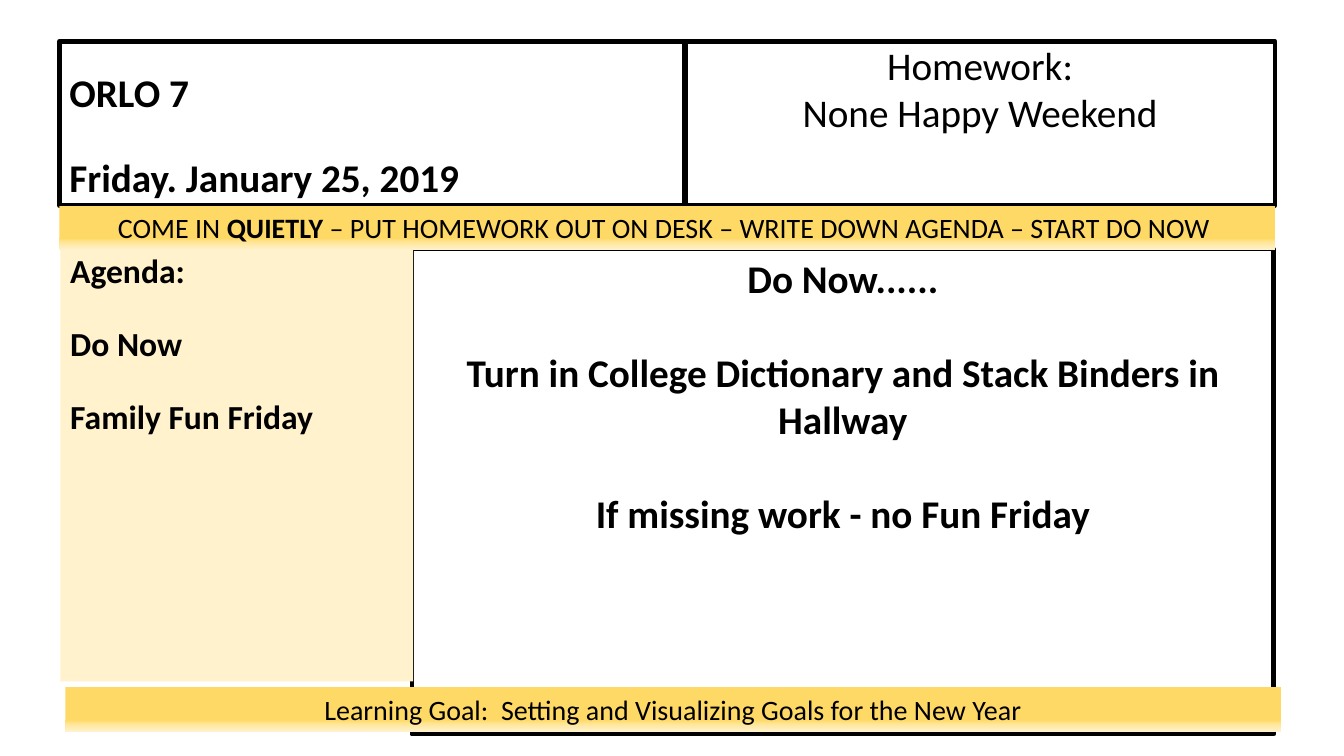
from dataclasses import dataclass
from lxml.etree import SubElement
from pptx import Presentation
from pptx.dml.color import RGBColor
from pptx.enum.text import MSO_ANCHOR, PP_ALIGN
from pptx.oxml.ns import qn
from pptx.util import Cm, Pt


@dataclass(frozen=True)
class Theme:
    font: str = "Calibri"
    ink: str = "000000"
    cream: str = "FFF2CC"
    fade: tuple = ((0, "FFD966"), (74, "FFD966"), (83, "FFE699"), (100, "FFF2CC"))
    large: float = 28
    medium: float = 24
    small: float = 20
    rule: float = 3.25


class Board:
    def __init__(self, slide, theme):
        self.slide = slide
        self.theme = theme

    def panel(self, spot, lines, size, bold=False, align=PP_ALIGN.CENTER,
              tight=1.0, gap=0, anchor=MSO_ANCHOR.TOP):
        box = self.slide.shapes.add_textbox(*map(Cm, spot))
        frame = box.text_frame
        frame.word_wrap = True
        frame.vertical_anchor = anchor
        for index, line in enumerate(lines):
            para = frame.paragraphs[0] if index == 0 else frame.add_paragraph()
            para.alignment = align
            para.line_spacing = tight
            para.space_before = Pt(gap if index else 0)
            font = para.font
            font.name = self.theme.font
            font.size = Pt(size)
            font.bold = bold
            font.color.rgb = RGBColor.from_string(self.theme.ink)
            for order, part in enumerate(line.split("*")):
                run = para.add_run()
                run.text = part
                if order % 2:
                    run.font.bold = True
        return box

    def frame(self, spot, lines, **style):
        box = self.panel(spot, lines, self.theme.large, **style)
        box.line.color.rgb = RGBColor.from_string(self.theme.ink)
        box.line.width = Pt(self.theme.rule)

    def block(self, spot, lines, **style):
        box = self.panel(spot, lines, self.theme.medium, **style)
        box.fill.solid()
        box.fill.fore_color.rgb = RGBColor.from_string(self.theme.cream)

    def banner(self, left, top, line):
        box = self.panel((left, top, 30.63, 1.12), [line], self.theme.small)
        box.fill.gradient()
        box.fill.gradient_angle = 270
        stops = box.element.spPr.find(qn("a:gradFill")).find(qn("a:gsLst"))
        for stop in list(stops):
            stops.remove(stop)
        for place, color in self.theme.fade:
            stop = SubElement(stops, qn("a:gs"), pos=str(place * 1000))
            SubElement(stop, qn("a:srgbClr"), val=color)


def main():
    deck = Presentation()
    deck.slide_width = Cm(33.87)
    deck.slide_height = Cm(19.05)
    board = Board(deck.slides.add_slide(deck.slide_layouts[6]), Theme())

    board.frame((1.5, 1.04, 15.75, 4.14), ["ORLO 7", "Friday. January 25, 2019"],
                bold=True, align=PP_ALIGN.LEFT, tight=0.9, gap=30,
                anchor=MSO_ANCHOR.BOTTOM)
    board.frame((17.27, 1.04, 14.86, 4.14), ["Homework:", "None Happy Weekend"],
                tight=0.9, gap=3.4)
    board.frame((10.38, 6.28, 21.72, 12.22),
                ["Do Now......",
                 "Turn in College Dictionary and Stack Binders in Hallway",
                 "If missing work - no Fun Friday"], bold=True, gap=33.6)
    board.banner(1.5, 5.18, "COME IN *QUIETLY* – PUT HOMEWORK OUT ON DESK"
                 " – WRITE DOWN AGENDA – START DO NOW ")
    board.block((1.52, 6.3, 8.89, 10.87), ["Agenda:", "Do Now", "Family Fun Friday"],
                bold=True, align=PP_ALIGN.LEFT, tight=0.9, gap=26)
    board.banner(1.65, 17.32,
                 "Learning Goal:  Setting and Visualizing Goals for the New Year")
    deck.save("out.pptx")


if __name__ == "__main__":
    main()
